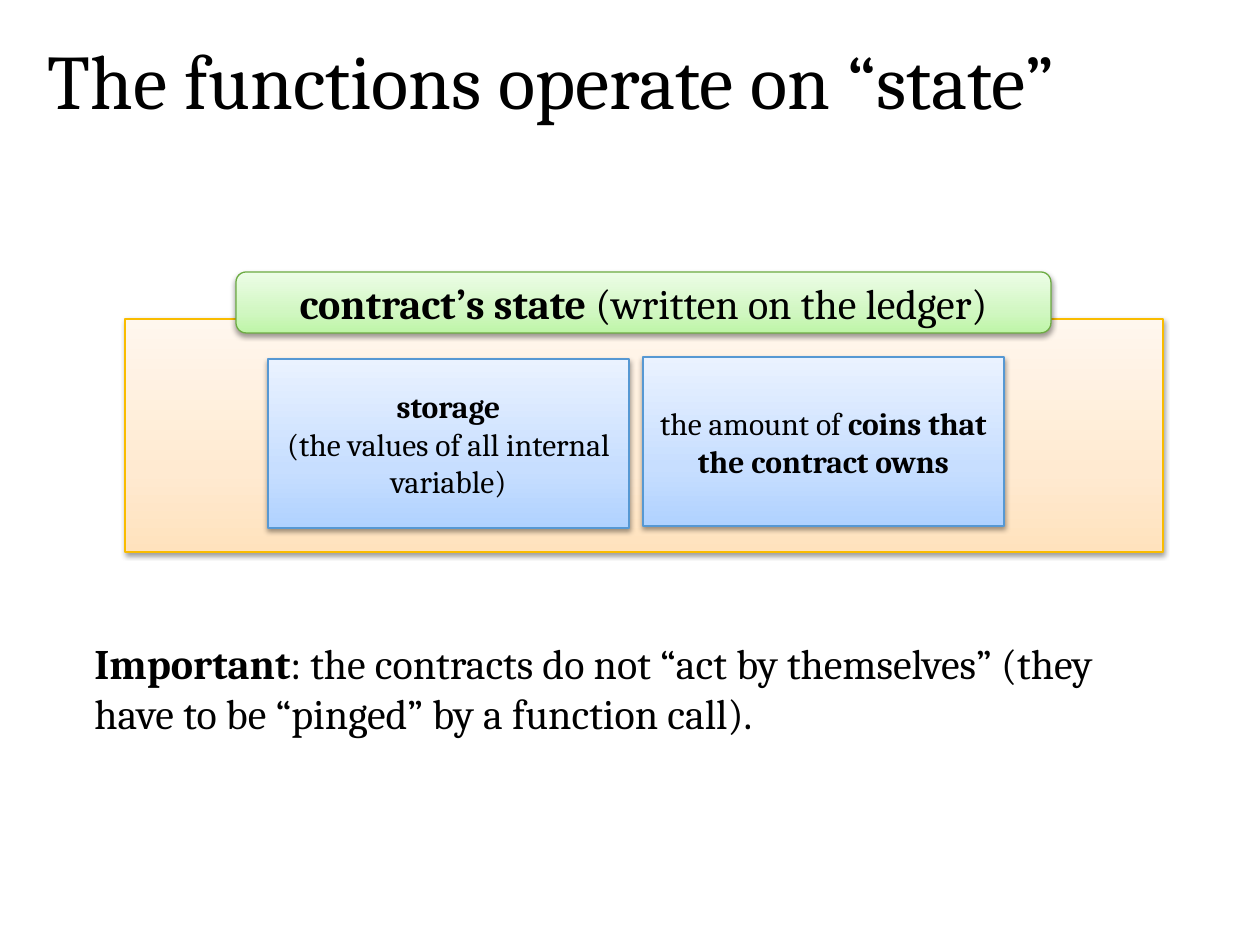
"""Build the slide on the state that contract functions operate on."""
from copy import deepcopy

from lxml import etree
from pptx import Presentation
from pptx.dml.color import RGBColor
from pptx.enum.shapes import MSO_SHAPE as Shape
from pptx.enum.text import MSO_ANCHOR as Anchor, MSO_AUTO_SIZE as AutoSize, PP_ALIGN as Align
from pptx.oxml import parse_xml
from pptx.util import Pt

PX = 914400 // 126
SHADOW = (
    '<a:outerShdw xmlns:a="http://schemas.openxmlformats.org/drawingml/2006/main" '
    'blurRad="40000" dist="20000" dir="5400000" rotWithShape="0">'
    '<a:srgbClr val="000000"><a:alpha val="38000"/></a:srgbClr></a:outerShdw>'
)


def write(frame, paragraphs, size, align=Align.LEFT, anchor=Anchor.TOP, spacing=None):
    frame.word_wrap = True
    frame.vertical_anchor = anchor
    for index, pieces in enumerate(paragraphs):
        paragraph = frame.add_paragraph() if index else frame.paragraphs[0]
        paragraph.alignment = align
        paragraph.line_spacing = spacing
        for text, bold in pieces:
            run = paragraph.add_run()
            run.text = text
            run.font.name = "Cambria"
            run.font.size = Pt(size)
            run.font.bold = bold
            run.font.color.rgb = RGBColor.from_string("000000")


def add_panel(kind, box, colors, edge):
    panel = slide.shapes.add_shape(kind, *[n * PX for n in box])
    panel.fill.gradient()
    panel.fill.gradient_angle = 90
    stop_list = panel._element.spPr.find(".//{*}gsLst")
    stop_list.append(deepcopy(stop_list[0]))
    for stop, position, color in zip(panel.fill.gradient_stops, (0, 0.35, 1), colors):
        stop.position = position
        stop.color.rgb = RGBColor.from_string(color)
    panel.line.color.rgb = RGBColor.from_string(edge)
    panel.line.width = Pt(0.75)
    panel.shadow.inherit = False
    panel._element.spPr.find("{*}effectLst").append(parse_xml(SHADOW))
    return panel


prs = Presentation()
prs.slide_width, prs.slide_height = 1260 * PX, 945 * PX
slide = prs.slides.add_slide(prs.slide_layouts[5])

title = slide.shapes.title
title.left, title.top, title.width, title.height = [n * PX for n in (35, 37, 1201, 122)]
write(title.text_frame, [[("The functions operate on “state”", False)]], size=44, spacing=0.9)

orange = ("FFE2BD", "FFEAD1", "FFF7EE")
green = ("BEF5A7", "D1F7C2", "EDFDE7")
blue = ("B0D2FF", "C7DEFF", "EAF2FF")
heading = [[("contract’s state ", True), ("(written on the ledger)", False)]]
storage = [[("storage", True)], [("(the values of all internal variable)", False)]]
coins = [[("the amount of ", False), ("coins that the contract owns", True)]]

add_panel(Shape.RECTANGLE, (125, 319, 1038, 233), orange, "F9BC00")
for kind, box, colors, edge, content, size in (
    (Shape.ROUNDED_RECTANGLE, (236, 272, 815, 61), green, "6DAC43", heading, 24),
    (Shape.RECTANGLE, (268, 359, 361, 169), blue, "5698D3", storage, 18),
    (Shape.RECTANGLE, (643, 357, 361, 169), blue, "5698D3", coins, 18),
):
    panel = add_panel(kind, box, colors, edge)
    write(panel.text_frame, content, size=size, align=Align.CENTER, anchor=Anchor.MIDDLE)

note = slide.shapes.add_textbox(*[n * PX for n in (82, 631, 1082, 115)]).text_frame
write(note, [[
    ("Important", True),
    (": the contracts do not “act by themselves” (they have to be “pinged” by a function call).", False),
]], size=24)
note.auto_size = AutoSize.SHAPE_TO_FIT_TEXT

prs.save("out.pptx")
